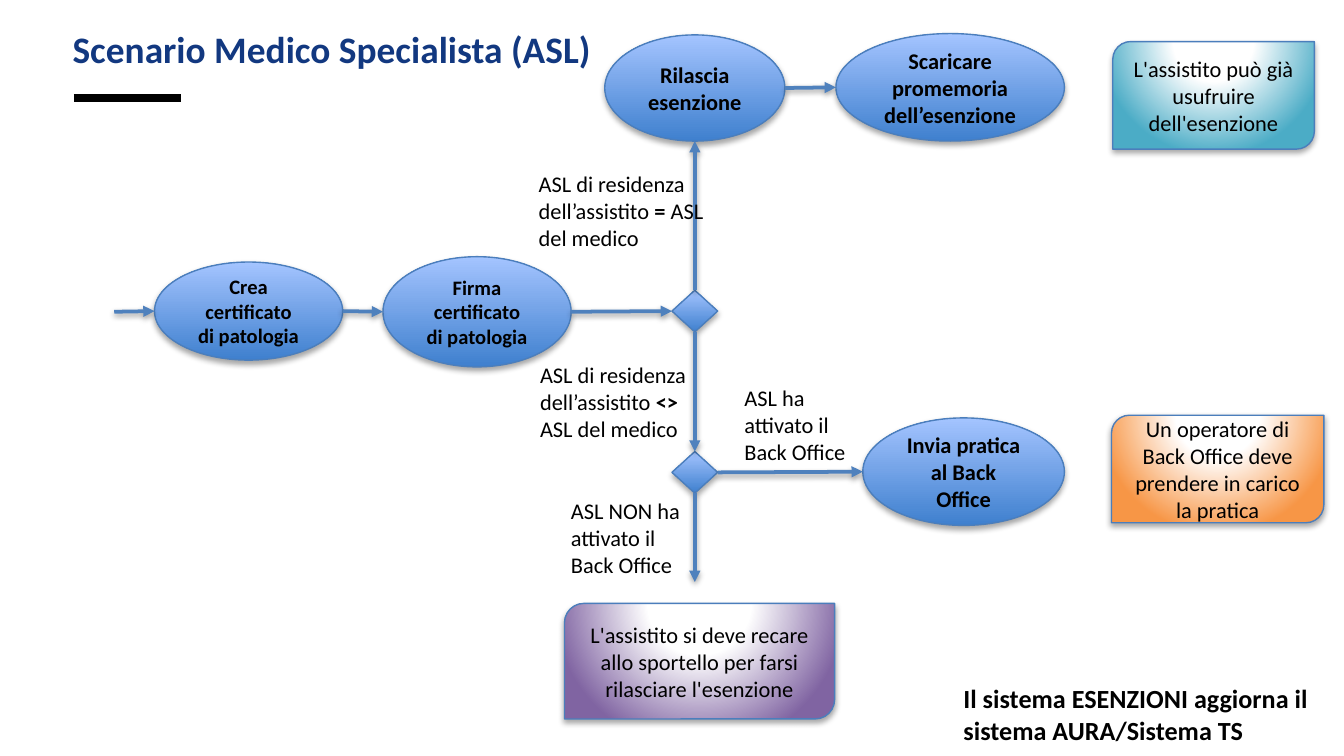
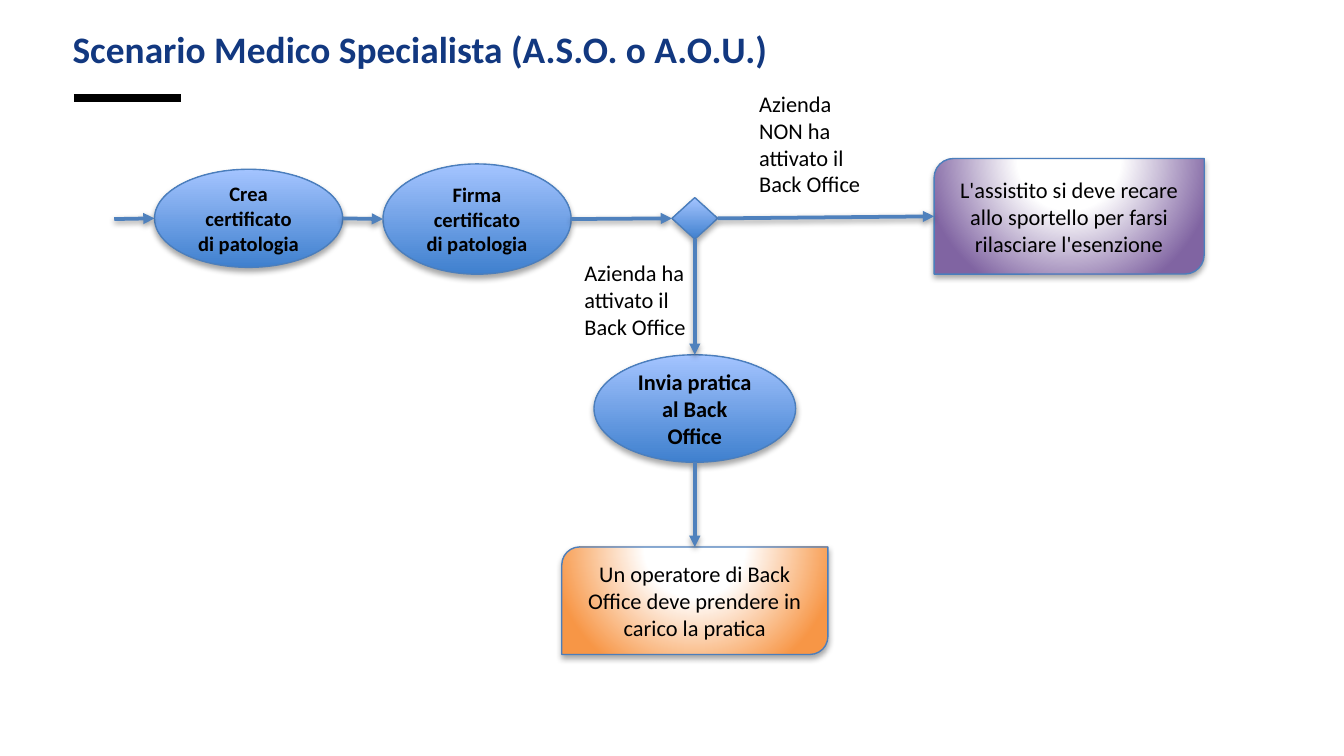
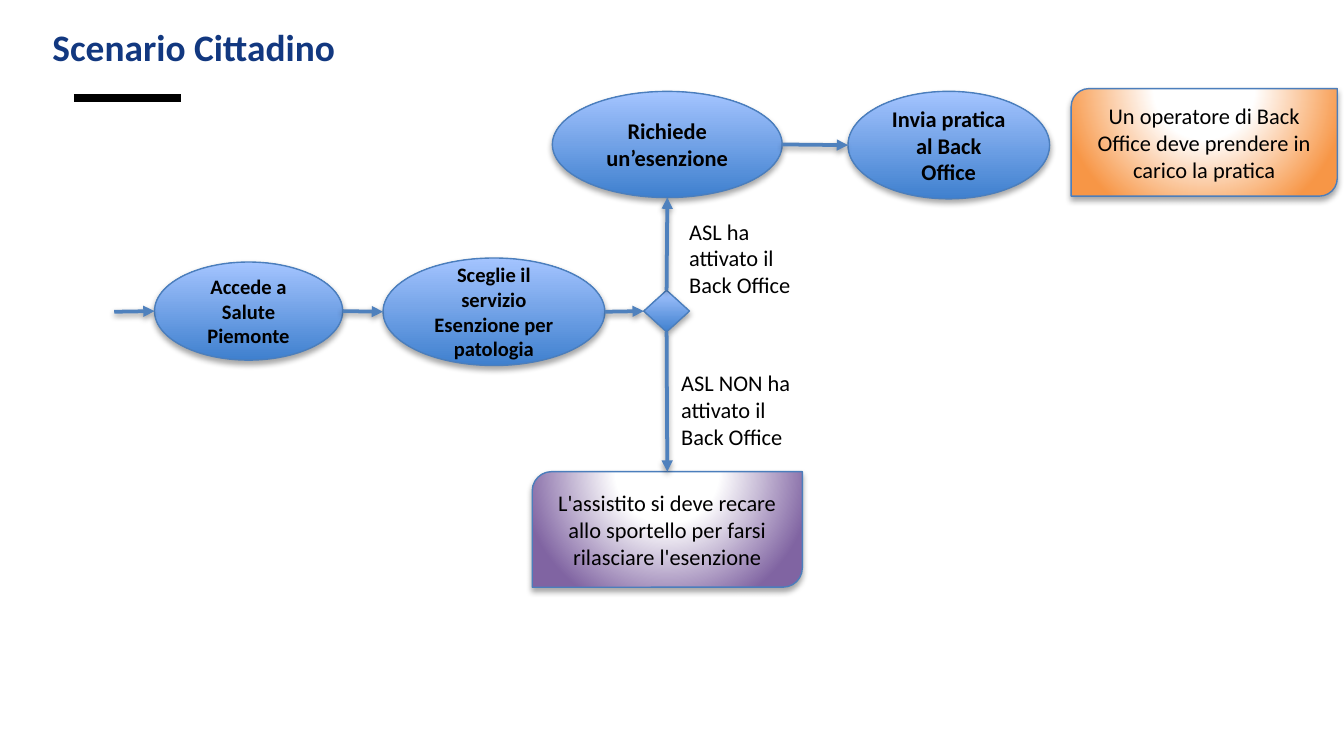
from dataclasses import dataclass

from lxml.etree import SubElement
from pptx import Presentation
from pptx.dml.color import RGBColor
from pptx.enum.shapes import MSO_CONNECTOR, MSO_SHAPE
from pptx.enum.text import MSO_ANCHOR, MSO_AUTO_SIZE, PP_ALIGN
from pptx.oxml import parse_xml
from pptx.oxml.ns import nsdecls, qn
from pptx.util import Emu, Pt


@dataclass(frozen=True)
class Theme:
    """Colours, font and type sizes shared by every slide."""

    font: str = "Calibri"
    ink: str = "000000"
    title: str = "123880"
    outline: str = "4B7EBC"
    arrow: str = "4F81BD"
    node_low: str = "3F80CE"
    node_high: str = "A4C4FF"
    white: str = "FFFFFF"
    teal: str = "4BACC6"
    orange: str = "F79646"
    purple: str = "8064A2"
    title_size: int = 20
    note_size: int = 14
    text_size: int = 12
    small_size: int = 11


THEME = Theme()
EMU_PER_PX = 9144
SEND = "Invia pratica al Back Office"
OPERATOR = "Un operatore di Back Office deve prendere in carico la pratica"
COUNTER = "L'assistito si deve recare allo sportello per farsi rilasciare l'esenzione"
LINEAR = '<a:lin ang="16200000" scaled="0"/>'
RADIAL = ('<a:path path="circle"><a:fillToRect l="50000" t="-80000" '
          'r="50000" b="180000"/></a:path>')


def px(*lengths):
    """Turn px lengths into EMU."""
    return [Emu(n * EMU_PER_PX) for n in lengths]


def write(tf, text, size=THEME.text_size, color=THEME.ink, bold=False,
          align=PP_ALIGN.LEFT, anchor=MSO_ANCHOR.TOP, auto_size=MSO_AUTO_SIZE.NONE):
    """Fill a text frame; parts between double asterisks are bold."""
    tf.word_wrap = True
    tf.auto_size = auto_size
    tf.vertical_anchor = anchor
    p = tf.paragraphs[0]
    p.alignment = align
    for i, part in enumerate(text.split("**")):
        if part:
            r = p.add_run()
            r.text = part
            r.font.name = THEME.font
            r.font.size = Pt(size)
            r.font.bold = bold or i % 2 == 1
            r.font.color.rgb = RGBColor.from_string(color)


def set_gradient(sp, stops, direction):
    """Give a shape a gradient of (percent, colour) stops."""
    marks = "".join(f'<a:gs pos="{pos * 1000}"><a:srgbClr val="{color}"/></a:gs>'
                    for pos, color in stops)
    fill = parse_xml(f'<a:gradFill {nsdecls("a")} rotWithShape="1">'
                     f'<a:gsLst>{marks}</a:gsLst>{direction}</a:gradFill>')
    sp._element.spPr.find(qn("a:prstGeom")).addnext(fill)


def set_shadow(sp, alpha=0, dist=0):
    """Replace the theme effect by a soft downward shadow, or by none."""
    effects = SubElement(sp._element.spPr, qn("a:effectLst"))
    if alpha:
        effects.append(parse_xml(
            f'<a:outerShdw {nsdecls("a")} blurRad="40000" dist="{dist}" dir="5400000" '
            f'rotWithShape="0"><a:srgbClr val="{THEME.ink}">'
            f'<a:alpha val="{alpha * 1000}"/></a:srgbClr></a:outerShdw>'))


def add_block(s, kind, box, stops, direction, text="", **style):
    """Add an outlined gradient shape with centred text."""
    sp = s.shapes.add_shape(kind, *px(*box))
    set_gradient(sp, stops, direction)
    sp.line.color.rgb = RGBColor.from_string(THEME.outline)
    sp.line.width = Pt(0.75)
    set_shadow(sp, alpha=35, dist=23000)
    write(sp.text_frame, text, align=PP_ALIGN.CENTER, anchor=MSO_ANCHOR.MIDDLE, **style)
    return sp


def add_node(s, box, text="", kind=MSO_SHAPE.OVAL, size=THEME.text_size):
    """Add a blue step of the flow."""
    stops = [(0, THEME.node_low), (100, THEME.node_high)]
    return add_block(s, kind, box, stops, LINEAR, text, size=size, bold=True)


def add_fork(s, left, mid):
    """Add a decision diamond centred on a height."""
    return add_node(s, (left, mid - 16, 34, 31), kind=MSO_SHAPE.FLOWCHART_DECISION)


def add_outcome(s, box, text, color):
    """Add a box with two rounded corners that states an outcome."""
    stops = [(0, THEME.white), (35, THEME.white), (100, color)]
    return add_block(s, MSO_SHAPE.ROUND_2_DIAG_RECTANGLE, box, stops, RADIAL, text)


def add_label(s, box, text, **style):
    """Add free text that grows with its content."""
    tb = s.shapes.add_textbox(*px(*box))
    write(tb.text_frame, text, auto_size=MSO_AUTO_SIZE.SHAPE_TO_FIT_TEXT, **style)


def add_line(s, start, end, color, width):
    """Add a straight line between two EMU points."""
    line = s.shapes.add_connector(MSO_CONNECTOR.STRAIGHT, *start, *end)
    line.line.color.rgb = RGBColor.from_string(color)
    line.line.width = Pt(width)
    return line


def add_arrow(s, start, end):
    """Add a shadowed flow arrow."""
    line = add_line(s, start, end, THEME.arrow, 2)
    SubElement(line.line._get_or_add_ln(), qn("a:tailEnd"), type="triangle")
    set_shadow(line, alpha=38, dist=20000)


def side(sp, name):
    """Return the middle of one side of a shape."""
    fx, fy = {"left": (0, 1), "right": (2, 1), "top": (1, 0), "bottom": (1, 2)}[name]
    return Emu(sp.left + sp.width * fx // 2), Emu(sp.top + sp.height * fy // 2)


def link_right(s, first, *others):
    """Chain shapes from left to right with arrows."""
    for sp in others:
        add_arrow(s, side(first, "right"), side(sp, "left"))
        first = sp


def link_up(s, lower, upper):
    """Point an arrow from a shape to the one above."""
    add_arrow(s, side(lower, "top"), side(upper, "bottom"))


def link_down(s, upper, lower):
    """Point an arrow from a shape to the one below."""
    add_arrow(s, side(upper, "bottom"), side(lower, "top"))


def add_slide(prs, title, left=44, top=0):
    """Add a slide with its title and the black bar."""
    s = prs.slides.add_slide(prs.slide_layouts[5])
    sp = s.shapes.title
    sp.left, sp.top, sp.width, sp.height = px(left, top, 901, 73)
    write(sp.text_frame, title, size=THEME.title_size, color=THEME.title,
          bold=True, anchor=MSO_ANCHOR.MIDDLE)
    set_shadow(add_line(s, px(55, 73), px(135, 73), THEME.ink, 4))
    return s


def add_opening(s, mid, first="Crea certificato di patologia",
                second="Firma certificato di patologia", width=140, height=82, fork_left=500):
    """Add the entry arrow, two steps and the fork, and return the fork."""
    step1 = add_node(s, (115, mid - 37, 140, 73), first, size=THEME.small_size)
    step2 = add_node(s, (285, mid - height // 2, width, height), second, size=THEME.small_size)
    fork = add_fork(s, fork_left, mid)
    add_arrow(s, px(85, mid), side(step1, "left"))
    link_right(s, step1, step2, fork)
    return fork


def build_asl(prs):
    """Build the flow of the ASL specialist."""
    s = add_slide(prs, "Scenario Medico Specialista (ASL)")
    fork = add_opening(s, 232)
    issue = add_node(s, (450, 26, 134, 79), "Rilascia esenzione")
    download = add_node(s, (622, 25, 170, 80), "Scaricare promemoria dell’esenzione")
    office_fork = add_fork(s, 500, 352)
    send = add_node(s, (642, 311, 150, 80), SEND)
    link_up(s, fork, issue)
    link_down(s, fork, office_fork)
    link_right(s, issue, download)
    link_right(s, office_fork, send)
    add_arrow(s, side(office_fork, "bottom"), px(517, 433))
    add_label(s, (391, 122, 143, 71), "ASL di residenza dell’assistito **= **ASL del medico")
    add_label(s, (392, 264, 143, 71), "ASL di residenza dell’assistito **<>** ASL del medico")
    add_label(s, (544, 281, 102, 71), "ASL ha attivato il Back Office")
    add_label(s, (415, 365, 102, 71), "ASL NON ha attivato il Back Office")
    add_outcome(s, (828, 31, 150, 80), "L'assistito può già usufruire dell'esenzione", THEME.teal)
    add_outcome(s, (827, 309, 158, 80), OPERATOR, THEME.orange)
    add_outcome(s, (420, 449, 201, 86), COUNTER, THEME.purple)
    add_label(s, (707, 503, 335, 57), "Il sistema ESENZIONI aggiorna il sistema AURA/Sistema TS",
              size=THEME.note_size, bold=True)


def build_hospital(prs):
    """Build the flow of the hospital specialist."""
    s = add_slide(prs, "Scenario Medico Specialista (A.S.O. o A.O.U.)")
    fork = add_opening(s, 163)
    send = add_node(s, (442, 264, 150, 80), SEND)
    operator = add_outcome(s, (418, 407, 198, 80), OPERATOR, THEME.orange)
    counter = add_outcome(s, (695, 118, 201, 86), COUNTER, THEME.purple)
    link_right(s, fork, counter)
    link_down(s, fork, send)
    link_down(s, send, operator)
    add_label(s, (425, 188, 102, 71), "Azienda ha attivato il Back Office")
    add_label(s, (555, 62, 102, 91), "Azienda NON ha attivato il Back Office")


def build_citizen(prs):
    """Build the flow of the citizen."""
    s = add_slide(prs, "Scenario Cittadino", left=29, top=-2)
    fork = add_opening(s, 232, "Accede a Salute Piemonte",
                       "Sceglie il servizio Esenzione per patologia",
                       width=165, height=80, fork_left=479)
    request = add_node(s, (411, 68, 171, 79), "Richiede un’esenzione")
    send = add_node(s, (631, 68, 150, 80), SEND)
    counter = add_outcome(s, (396, 351, 201, 86), COUNTER, THEME.purple)
    add_outcome(s, (797, 66, 198, 80), OPERATOR, THEME.orange)
    link_up(s, fork, request)
    link_right(s, request, send)
    link_down(s, fork, counter)
    add_label(s, (503, 157, 102, 71), "ASL ha attivato il Back Office")
    add_label(s, (497, 270, 102, 71), "ASL NON ha attivato il Back Office")


def main():
    """Build the three slides and save them."""
    prs = Presentation()
    prs.slide_width, = px(1000)
    prs.slide_height = Emu(prs.slide_width * 9 // 16)
    build_asl(prs)
    build_hospital(prs)
    build_citizen(prs)
    prs.save("out.pptx")


if __name__ == "__main__":
    main()
